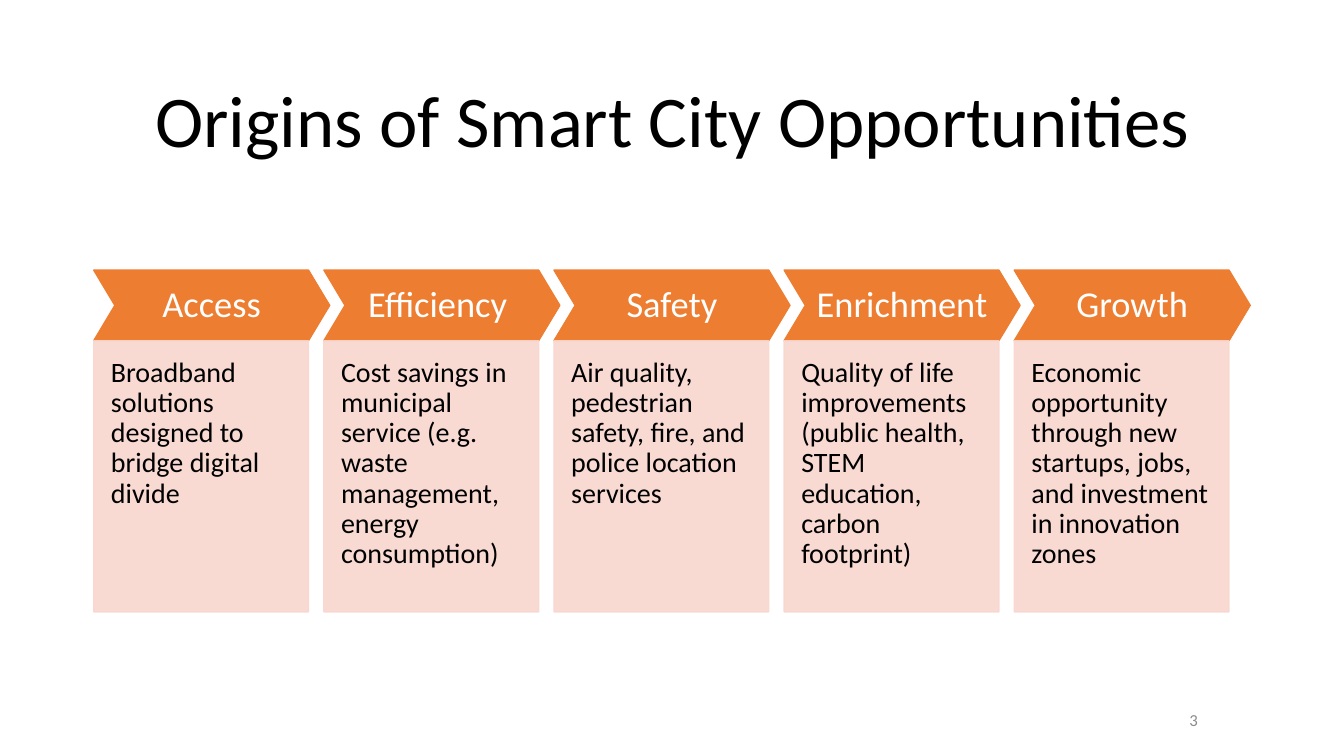
from lxml.etree import SubElement
from pptx import Presentation
from pptx.dml.color import RGBColor
from pptx.enum.shapes import MSO_SHAPE as Shape
from pptx.enum.text import MSO_ANCHOR as Anchor, PP_ALIGN as Align
from pptx.oxml.ns import qn
from pptx.util import Inches, Pt

COLORS = {
    "text": "000000",
    "header": "ED7D31",
    "header_text": "FFFFFF",
    "card": "F8D7CE",
    "number": "8C8C8C",
}

ORIGINS = [
    ("Access", "Broadband solutions designed to bridge digital divide"),
    ("Efficiency ", "Cost savings in municipal service (e.g. waste management, energy consumption)"),
    ("Safety", "Air quality, pedestrian safety, fire, and police location services"),
    ("Enrichment ", "Quality of life improvements (public health, STEM education, carbon footprint)"),
    ("Growth", "Economic opportunity through new startups, jobs, and investment in innovation zones"),
]

LEFT, RIGHT = 0.93, 10.06
PITCH = (RIGHT - LEFT) / (len(ORIGINS) - 1)
HEADER_TOP, HEADER_WIDTH, HEADER_HEIGHT = 2.68, 2.34, 0.7
CARD_WIDTH, CARD_HEIGHT = 2.13, 2.69


class SlideBuilder:
    font = "Calibri"
    line_spacing = 0.9

    def __init__(self, page):
        self.page = page

    def color(self, name):
        return RGBColor.from_string(COLORS[name])

    def set_text(self, box, text, size, color, align, anchor, insets=(0.1, 0.05, 0.1, 0.05)):
        frame = box.text_frame
        frame.text = text
        frame.word_wrap = True
        frame.vertical_anchor = anchor
        (frame.margin_left, frame.margin_top,
         frame.margin_right, frame.margin_bottom) = map(Inches, insets)
        para = frame.paragraphs[0]
        para.alignment = align
        para.line_spacing = self.line_spacing
        span = para.runs[0]
        span.font.name = self.font
        span.font.size = Pt(size)
        span.font.color.rgb = self.color(color)

    def shape(self, kind, place, fill=None, opacity=100):
        box = self.page.shapes.add_shape(kind, *map(Inches, place))
        box.shadow.inherit = False
        if fill is None:
            box.fill.background()
            box.line.fill.background()
            return box
        box.fill.solid()
        box.fill.fore_color.rgb = self.color(fill)
        box.line.color.rgb = self.color(fill)
        box.line.width = Pt(1)
        if opacity < 100:
            for tint in box.element.spPr.findall(".//" + qn("a:srgbClr")):
                SubElement(tint, qn("a:alpha"), val=str(opacity * 1000))
        return box

    def title(self, text):
        box = self.page.shapes.add_textbox(*map(Inches, (0.92, 0.61, 11.5, 1.24)))
        self.set_text(box, text, 52, "text", Align.CENTER, Anchor.MIDDLE)

    def header(self, left, text):
        box = self.shape(Shape.CHEVRON, (left, HEADER_TOP, HEADER_WIDTH, HEADER_HEIGHT), "header")
        box.adjustments[0] = 0.3
        self.set_text(box, text, 26, "header_text", Align.CENTER, Anchor.MIDDLE, (0.09,) * 4)

    def card(self, left, text):
        top = HEADER_TOP + HEADER_HEIGHT
        box = self.shape(Shape.RECTANGLE, (left, top, CARD_WIDTH, CARD_HEIGHT), "card", 90)
        self.set_text(box, text, 20, "text", Align.LEFT, Anchor.TOP, (0.17, 0.17, 0.17, 0.34))

    def number(self, text):
        box = self.shape(Shape.OVAL, (9.42, 6.95, 3, 0.4))
        self.set_text(box, text, 12, "number", Align.RIGHT, Anchor.MIDDLE)


def main():
    deck = Presentation()
    deck.slide_width, deck.slide_height = Inches(13.33), Inches(7.5)
    builder = SlideBuilder(deck.slides.add_slide(deck.slide_layouts[6]))
    builder.title("Origins of Smart City Opportunities")
    builder.number("3")
    for index, (name, detail) in enumerate(ORIGINS):
        left = LEFT + index * PITCH
        builder.header(left, name)
        builder.card(left, detail)
    deck.save("out.pptx")


if __name__ == "__main__":
    main()
